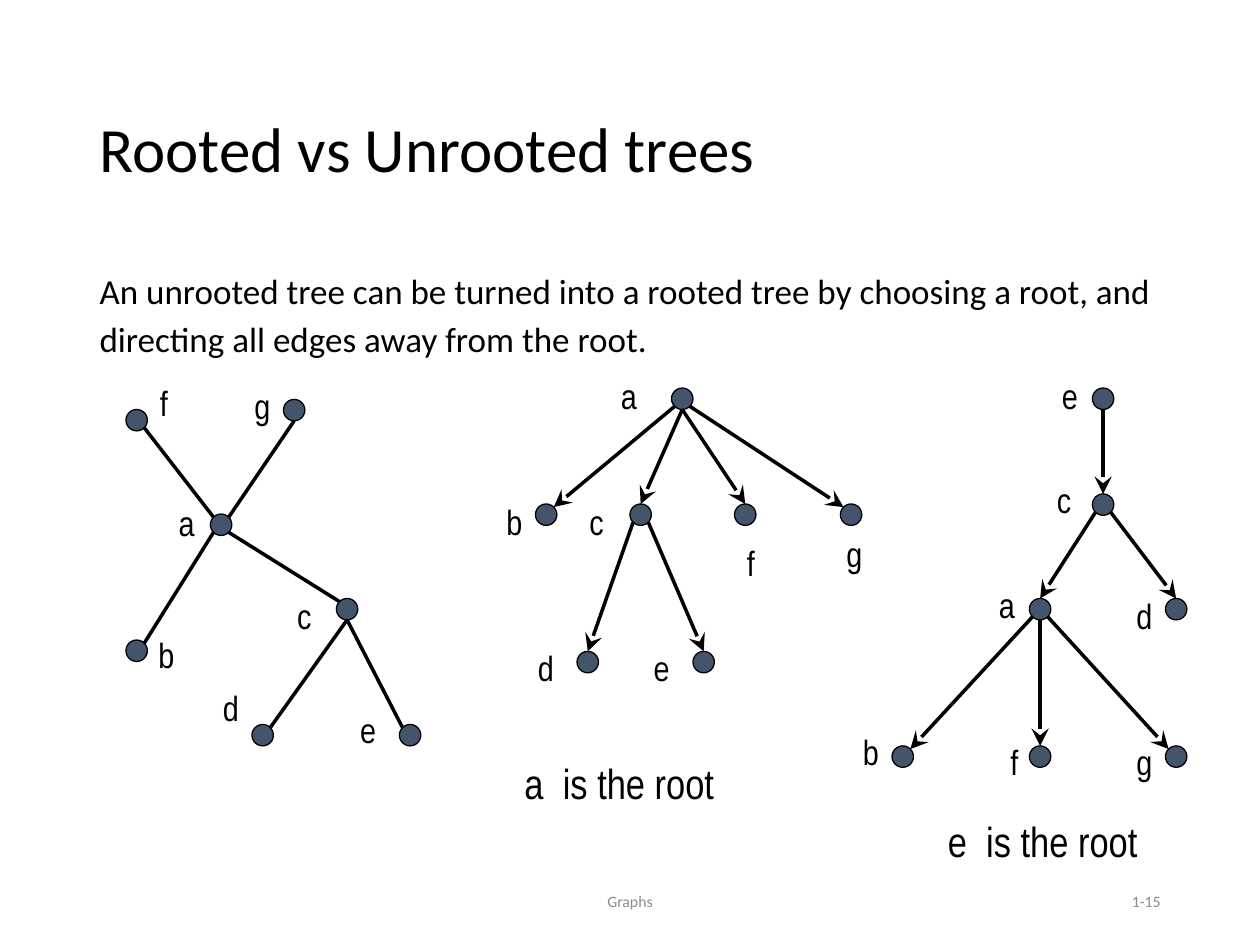
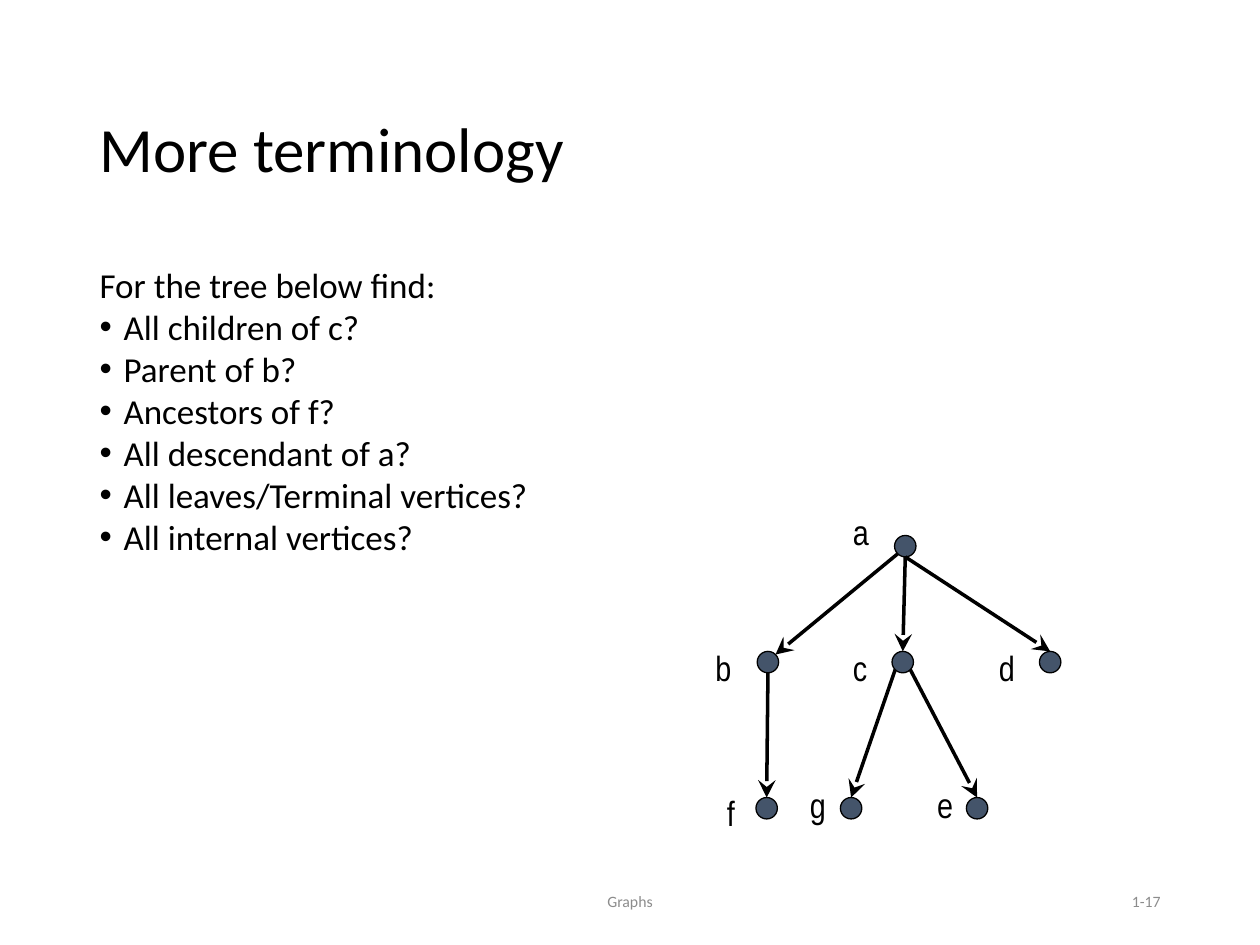
from dataclasses import dataclass
from math import sqrt

from lxml.etree import SubElement
from pptx import Presentation
from pptx.dml.color import RGBColor
from pptx.enum.shapes import MSO_CONNECTOR as Connector, MSO_SHAPE as Shape
from pptx.enum.text import MSO_ANCHOR as Anchor, MSO_AUTO_SIZE as AutoSize, PP_ALIGN as Align
from pptx.oxml.ns import qn
from pptx.util import Inches, Pt


@dataclass(frozen=True)
class Theme:
    ink: str = "000000"
    node: str = "44546A"
    muted: str = "8C8C8C"
    text_font: str = "Calibri"
    label_font: str = "Arial Narrow"
    title_size: int = 36
    body_size: int = 20
    label_size: int = 20
    caption_size: int = 24
    footer_size: int = 9
    outline: float = 0.75
    edge: float = 2


NODE_SIZE = 0.17
DIAGONAL = sqrt(0.5)
# Direction from the centre of a node to each point where an edge can meet it.
SITES = {
    "n": (0, -1), "s": (0, 1),
    "nw": (-DIAGONAL, -DIAGONAL), "ne": (DIAGONAL, -DIAGONAL),
    "sw": (-DIAGONAL, DIAGONAL), "se": (DIAGONAL, DIAGONAL),
}
LABEL_WIDTHS = {"c": 0.32, "f": 0.26}


def write(frame, text, *, size, color, font, align=Align.LEFT,
          spacing=1.0, before=0, bullet=None):
    """Add one formatted paragraph, using the empty first one if there is one."""
    para = frame.paragraphs[0] if not frame.text else frame.add_paragraph()
    para.alignment = align
    para.line_spacing = spacing
    para.space_before = Pt(before)
    props = para._p.get_or_add_pPr()
    indent = Inches(0.19) if bullet else 0
    props.set("marL", str(indent))
    props.set("indent", str(-indent))
    if bullet:
        SubElement(props, qn("a:buFont"), typeface="Arial")
        SubElement(props, qn("a:buChar"), char=bullet)
    else:
        SubElement(props, qn("a:buNone"))
    span = para.add_run()
    span.text = text
    span.font.size = Pt(size)
    span.font.name = font
    span.font.color.rgb = RGBColor.from_string(color)


def place(box, left, top, width, height):
    box.left, box.top = Inches(left), Inches(top)
    box.width, box.height = Inches(width), Inches(height)


class Deck:
    def __init__(self, theme):
        self.theme = theme
        self.deck = Presentation()
        self.deck.slide_width, self.deck.slide_height = Inches(10), Inches(7.5)
        self.page = None

    def add_page(self, title, number):
        self.page = self.deck.slides.add_slide(self.deck.slide_layouts[1])
        box = self.page.shapes.title
        place(box, 0.69, 0.4, 8.62, 1.45)
        frame = box.text_frame
        frame.auto_size = AutoSize.NONE
        frame.vertical_anchor = Anchor.MIDDLE
        write(frame, title, size=self.theme.title_size, color=self.theme.ink,
              font=self.theme.text_font, spacing=1.15, before=6)
        self.footer("Graphs", 3.31, 3.38, Align.CENTER)
        self.footer(number, 7.06, 2.25, Align.RIGHT)

    def footer(self, text, left, width, align):
        box = self.page.shapes.add_textbox(
            Inches(left), Inches(6.95), Inches(width), Inches(0.4))
        frame = box.text_frame
        frame.word_wrap = True
        frame.vertical_anchor = Anchor.MIDDLE
        write(frame, text, size=self.theme.footer_size, color=self.theme.muted,
              font=self.theme.text_font, align=align)

    def body(self, intro, items=(), **layout):
        box = self.page.placeholders[1]
        place(box, 0.69, 2.04, 8.62, 4.76)
        frame = box.text_frame
        frame.auto_size = AutoSize.NONE
        style = dict(size=self.theme.body_size, color=self.theme.ink,
                     font=self.theme.text_font, **layout)
        write(frame, intro, **style)
        for item in items:
            write(frame, item, bullet="•", **style)

    def label(self, group, text, left, top, width, height=0.43, size=None,
              align=Align.LEFT):
        box = group.shapes.add_textbox(
            Inches(left), Inches(top), Inches(width), Inches(height))
        frame = box.text_frame
        frame.word_wrap = False
        frame.auto_size = AutoSize.SHAPE_TO_FIT_TEXT
        write(frame, text, size=size or self.theme.label_size,
              color=self.theme.ink, font=self.theme.label_font, align=align)

    def node(self, group, left, top):
        dot = group.shapes.add_shape(
            Shape.OVAL, Inches(left), Inches(top), Inches(NODE_SIZE), Inches(NODE_SIZE))
        dot.shadow.inherit = False
        dot.fill.solid()
        dot.fill.fore_color.rgb = RGBColor.from_string(self.theme.node)
        dot.line.color.rgb = RGBColor.from_string(self.theme.ink)
        dot.line.width = Pt(self.theme.outline)

    def edge(self, group, start, end, directed):
        points = [Inches(length) for length in (*start, *end)]
        edge = group.shapes.add_connector(Connector.STRAIGHT, *points)
        edge.line.color.rgb = RGBColor.from_string(self.theme.ink)
        edge.line.width = Pt(self.theme.edge)
        props = edge._element.spPr
        if directed:
            SubElement(props.find(qn("a:ln")), qn("a:tailEnd"),
                       type="stealth", w="lg", len="lg")
        SubElement(props, qn("a:effectLst"))

    def tree(self, nodes, edges, directed=True, caption=None):
        """Draw nodes {name: (left, top, label left, label top)} and
        edges "name.site name.site", with an optional (text, left, top) caption."""
        group = self.page.shapes.add_group_shape()

        def meeting_point(end):
            name, site = end.split(".")
            return [corner + NODE_SIZE / 2 * (1 + step)
                    for corner, step in zip(nodes[name], SITES[site])]

        for left, top, *_ in nodes.values():
            self.node(group, left, top)
        for edge in edges:
            start, end = map(meeting_point, edge.split())
            self.edge(group, start, end, directed)
        for name, (_, _, left, top) in nodes.items():
            self.label(group, name, left, top, LABEL_WIDTHS.get(name, 0.33))
        if caption:
            self.label(group, *caption, 1.71, 0.5,
                       size=self.theme.caption_size, align=Align.CENTER)


def rooted_trees_page(deck):
    deck.add_page("Rooted vs Unrooted trees", "1-15")
    deck.body("An unrooted tree can be turned into a rooted tree by choosing a root, "
              "and directing all edges away from the root.", spacing=1.15, before=6)
    deck.tree(
        {"a": (1.67, 4.08, 1.32, 3.93), "f": (1, 3.25, 1.17, 2.98),
         "b": (1, 5.08, 1.16, 4.98), "g": (2.25, 3.17, 1.92, 3),
         "c": (2.67, 4.75, 2.26, 4.67), "d": (2, 5.75, 1.67, 5.4),
         "e": (3.17, 5.75, 2.76, 5.57)},
        ["f.se a.nw", "g.s a.ne", "a.se c.nw", "a.sw b.ne", "c.s e.nw", "c.s d.ne"],
        directed=False)
    deck.tree(
        {"a": (5.33, 3.08, 4.83, 2.92), "b": (4.25, 4, 3.92, 3.92),
         "c": (5, 4, 4.58, 3.92), "f": (5.83, 4, 5.83, 4.25),
         "g": (6.67, 4, 6.62, 4.18), "d": (4.58, 5.17, 4.17, 5.08),
         "e": (5.5, 5.17, 5.09, 5.08)},
        ["a.sw b.ne", "a.s c.n", "a.s f.n", "a.se g.nw", "c.sw d.n", "c.se e.n"],
        caption=("a  is the root", 4.06, 5.96))
    deck.tree(
        {"e": (8.67, 3.08, 8.33, 2.92), "c": (8.67, 3.92, 8.29, 3.75),
         "a": (8.17, 4.75, 7.83, 4.58), "d": (9.25, 4.75, 8.92, 4.67),
         "b": (7.08, 5.92, 6.75, 5.75), "f": (8.17, 5.92, 7.92, 5.83),
         "g": (9.25, 5.92, 8.92, 5.83)},
        ["e.s c.n", "c.sw a.n", "c.se d.n", "a.sw b.ne", "a.s f.n", "a.se g.nw"],
        caption=("e  is the root", 7.42, 6.42))


def terminology_page(deck):
    deck.add_page("More terminology", "1-17")
    deck.body("For the tree below find:",
              ["All children of c?", "Parent of b?", "Ancestors of f?",
               "All descendant of a?", "All leaves/Terminal vertices?",
               "All internal vertices?"])
    deck.tree(
        {"a": (7.1, 4.25, 6.67, 4), "b": (6.01, 5.17, 5.58, 5.08),
         "c": (7.08, 5.17, 6.67, 5.08), "d": (8.25, 5.17, 7.83, 5.08),
         "f": (6, 6.33, 5.67, 6.23), "g": (6.67, 6.33, 6.33, 6.17),
         "e": (7.67, 6.33, 7.34, 6.17)},
        ["a.sw b.ne", "a.s c.n", "a.s d.n", "b.s f.n", "c.sw g.n", "c.se e.n"])


def main():
    deck = Deck(Theme())
    rooted_trees_page(deck)
    terminology_page(deck)
    deck.deck.save("out.pptx")


if __name__ == "__main__":
    main()
